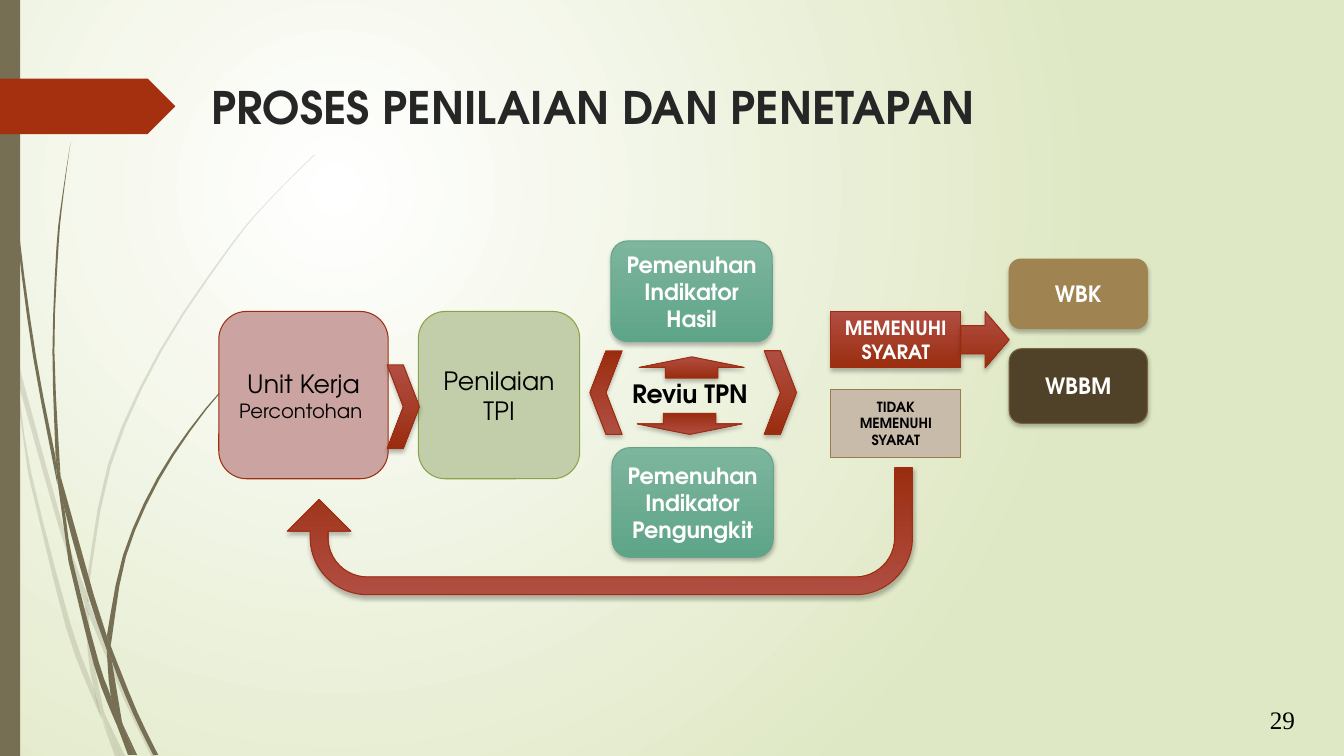
from dataclasses import dataclass

from pptx import Presentation
from pptx import util as u
from pptx.dml.color import RGBColor
from pptx.enum import shapes, text
from pptx.oxml import parse_xml
from pptx.oxml.ns import nsdecls, qn

Kind = shapes.MSO_SHAPE


@dataclass(frozen=True)
class Theme:
    """Colours, fonts and type sizes of the slide."""
    font: str = "TeX Gyre Adventor"
    number_font: str = "Times New Roman"
    back: tuple = ("FFFFFF", "DFE8C4")
    reed: str = "766F54"
    tag: str = "A53010"
    red: tuple = ("B14E43", "9A2D0F")
    red_line: str = "9E2E0F"
    green: tuple = ("7DB59D", "5EA588")
    green_line: str = "65A48B"
    rose: str = "CBA3A0"
    sage: str = "C2CEA9"
    sage_line: str = "8BA249"
    sand: str = "C8BBAA"
    sand_line: str = "987D4D"
    gold: str = "9F8351"
    brown: str = "504228"
    brown_line: str = "77623D"
    heading: str = "262626"
    black: str = "000000"
    white: str = "FFFFFF"
    title: int = 32
    large: int = 18
    medium: int = 16
    small: int = 14
    tiny: int = 10


THEME = Theme()

PALE_REEDS = [
    ([(0.11, 3.5), (0.09, 3.22), (0, 2.82)], [(0, 2.99), (0.1, 3.44)]),
    ([(0.17, 3.76), (0.58, 5.22), (0.84, 5.99)], [(0.85, 5.86), (0.62, 5.2), (0.14, 3.45)]),
    ([(0.88, 5.96), (0.92, 6.07), (1.27, 6.92), (1.55, 7.5)], [(1.5, 7.5), (1.23, 6.94), (0.88, 6.1)]),
    ([(1.19, 7.5), (1.24, 7.5)], [(1.05, 7.11)]),
    ([(0.11, 3.5), (0.17, 3.76), (0.31, 4.69), (0.7, 6.19), (0.93, 6.83), (1.01, 7.14)],
     [(0.92, 6.93), (0.65, 6.21), (0.28, 4.7)]),
    ([(0.84, 5.99), (0.87, 6.46), (0.93, 6.83), (1.05, 7.11)], [(1.03, 7.06), (0.91, 6.46), (0.88, 6.08)]),
    ([(0.88, 5.96), (0.88, 5.84), (1.1, 4.62), (1.6, 3.49), (2.29, 2.45), (2.68, 1.98), (3.12, 1.54)],
     [(3.12, 1.53), (2.68, 1.97), (2.28, 2.44), (1.58, 3.48), (1.07, 4.61), (0.85, 5.84)]),
    ([(1.01, 7.14), (1.14, 7.5)], [(1.19, 7.5)]),
    ([(0.88, 6.1), (0.88, 5.96)], [(0.85, 5.86), (0.84, 5.99)]),
    ([(0.93, 6.83), (0.99, 7.07), (1.19, 7.5)], [(1.05, 7.11), (0.96, 6.92)]),
]
DARK_REEDS = [
    ([(0.03, 0), (0.07, 1.1), (0.17, 2.33), (0.33, 3.55), (0.57, 4.81)],
     [(0.55, 4.53), (0.36, 3.55), (0.19, 2.32), (0.08, 1.09), (0.04, 0)]),
    ([(0.6, 4.72), (0.64, 5.05), (0.88, 5.92), (1.06, 6.45)], [(1.06, 6.31), (0.93, 5.9)]),
    ([(1.1, 6.41), (1.11, 6.56), (1.32, 7.08), (1.52, 7.49)], [(1.57, 7.49), (1.36, 7.06), (1.13, 6.49)]),
    ([(0.57, 4.77), (0.64, 5.05), (0.72, 5.56), (0.98, 6.57), (1.1, 6.91), (1.17, 7.22)],
     [(1.11, 7.08), (0.93, 6.59), (0.68, 5.57)]),
    ([(0.6, 4.72), (0.54, 3.49), (0.58, 2.45), (0.63, 1.93), (0.7, 1.41)],
     [(0.7, 1.41), (0.62, 1.93), (0.56, 2.45), (0.52, 3.49), (0.55, 4.49)]),
    ([(1.33, 7.49), (1.36, 7.49)], [(1.22, 7.19)]),
    ([(0.55, 4.49), (0.57, 4.77), (0.64, 5.05)], [(0.6, 4.72)]),
    ([(1.1, 6.41), (1.11, 6.33), (1.25, 5.52), (1.58, 4.76), (2.05, 4.06), (2.6, 3.44)],
     [(2.6, 3.44), (2.04, 4.05), (1.56, 4.74), (1.22, 5.51), (1.06, 6.31)]),
    ([(1.17, 7.22), (1.27, 7.49)], [(1.31, 7.49)]),
    ([(1.06, 6.45), (1.1, 6.91), (1.22, 7.19)], [(1.21, 7.16), (1.11, 6.56)]),
    ([(1.06, 6.31), (1.06, 6.45)], [(1.11, 6.56), (1.1, 6.41)]),
    ([(1.1, 6.91), (1.17, 7.22), (1.3, 7.49)], [(1.33, 7.49), (1.22, 7.19), (1.16, 7.06)]),
]


def smooth_edge(points, steps=3):
    """Return points along a Catmull-Rom curve through the given points."""
    padded = [points[0], *points, points[-1]]
    curve = [points[0]]
    for a, b, c, d in zip(padded, padded[1:], padded[2:], padded[3:]):
        for step in range(1, steps + 1):
            t = step / steps
            curve.append(tuple(
                q + t / 2 * (r - p + t * (2 * p - 5 * q + 4 * r - s + t * (3 * q - p - 3 * r + s)))
                for p, q, r, s in zip(a, b, c, d)))
    return curve


def paint_gradient(fill, colors):
    """Give a fill a two-colour gradient running from top to bottom."""
    fill.gradient()
    fill.gradient_angle = 270
    for stop, color in zip(fill.gradient_stops, colors):
        stop.color.rgb = RGBColor.from_string(color)


def paint(shape, fill, line=None, shadow=False):
    """Set the fill, outline and soft shadow of a shape."""
    if isinstance(fill, tuple):
        paint_gradient(shape.fill, fill)
    else:
        shape.fill.solid()
        shape.fill.fore_color.rgb = RGBColor.from_string(fill)
    if line:
        shape.line.color.rgb = RGBColor.from_string(line)
        shape.line.width = u.Pt(0.75)
    else:
        shape.line.fill.background()
    shape.shadow.inherit = False
    if shadow:
        shape.element.spPr.find(qn("a:effectLst")).append(parse_xml(
            f'<a:outerShdw {nsdecls("a")} blurRad="{u.Pt(3)}" dist="{u.Pt(2)}" dir="5400000" '
            'rotWithShape="0"><a:srgbClr val="000000"><a:alpha val="25000"/></a:srgbClr></a:outerShdw>'))


def set_font(font, size, color, bold=False, name=THEME.font):
    """Set the face, size, colour and weight of a font."""
    font.name, font.size, font.bold = name, u.Pt(size), bold
    font.color.rgb = RGBColor.from_string(color)


def add_shape(page, kind, at, fill, line=None, shadow=False, turn=0):
    """Draw a preset shape."""
    shape = page.shapes.add_shape(kind, *map(u.Inches, at))
    shape.rotation = turn
    paint(shape, fill, line, shadow)
    return shape


def add_box(page, kind, at, words, size, color, fill, line, bold=True, shadow=True):
    """Draw a process box with centred words."""
    para = add_shape(page, kind, at, fill, line, shadow).text_frame.paragraphs[0]
    para.text = words
    para.alignment = text.PP_ALIGN.CENTER
    set_font(para.font, size, color, bold)
    return para


def add_arrow(page, kind, at, turn=0):
    """Draw a red block arrow."""
    return add_shape(page, kind, at, THEME.red, THEME.red_line, True, turn)


def add_label(page, at, words, size, color, bold=True, name=THEME.font, wrap=True):
    """Place a text box and return its frame."""
    frame = page.shapes.add_textbox(*map(u.Inches, at)).text_frame
    frame.word_wrap = wrap
    frame.paragraphs[0].text = words
    set_font(frame.paragraphs[0].font, size, color, bold, name)
    return frame


def add_reed(page, edges, alpha):
    """Draw a curved blade between its two edges."""
    outline = [tuple(map(u.Inches, point)) for edge in edges for point in smooth_edge(edge)]
    builder = page.shapes.build_freeform(*outline[0])
    builder.add_line_segments(outline[1:], close=True)
    reed = builder.convert_to_shape()
    paint(reed, THEME.reed)
    color = reed.element.spPr.find(qn("a:solidFill"))[0]
    color.append(parse_xml(f'<a:alpha {nsdecls("a")} val="{alpha * 1000}"/>'))


def add_backdrop(page):
    """Draw the radial background, the reeds, the side bar and the title tag."""
    paint_gradient(page.background.fill, THEME.back)
    gradient = page.element.find(".//" + qn("a:gradFill"))
    gradient.replace(gradient.find(qn("a:lin")), parse_xml(
        f'<a:path {nsdecls("a")} path="circle">'
        '<a:fillToRect l="50000" t="50000" r="100000" b="100000"/></a:path>'))
    for reeds, alpha in ((PALE_REEDS, 20), (DARK_REEDS, 100)):
        for edges in reeds:
            add_reed(page, edges, alpha)
    add_shape(page, Kind.RECTANGLE, (0, 0, 0.2, 7.5), THEME.reed)
    add_shape(page, Kind.PENTAGON, (0, 0.78, 1.74, 0.55), THEME.tag)


def add_process(page):
    """Draw the assessment flow from work unit to award."""
    t, rounded, square = THEME, Kind.ROUNDED_RECTANGLE, Kind.RECTANGLE
    unit = add_box(page, rounded, (2.17, 3.09, 1.68, 1.66), "Unit Kerja ", t.large, t.black,
                   t.rose, t.red_line, False, False)
    span = unit.add_run()
    span.text = "Percontohan "
    span.font.size = u.Pt(t.small)
    add_box(page, rounded, (4.15, 3.09, 1.6, 1.66), "Penilaian TPI", t.large, t.black,
            t.sage, t.sage_line, False, False)
    for at, words in (((6.06, 2.39, 1.6, 1), "Pemenuhan Indikator Hasil"),
                      ((6.07, 4.44, 1.6, 1.09), "Pemenuhan Indikator Pengungkit")):
        add_box(page, rounded, at, words, t.medium, t.white, t.green, t.green_line)
    add_label(page, (6.17, 3.7, 1.41, 0.45), "Reviu TPN", t.large, t.black, wrap=False)
    for left, top, turn in ((6.34, 3.54, 0), (6.32, 4.1, 180)):
        add_arrow(page, Kind.UP_ARROW, (left, top, 1.04, 0.21), turn)
    for left, top, turn in ((7.58, 3.48, 0), (5.85, 3.48, 180), (3.84, 3.62, 0)):
        add_arrow(page, Kind.CHEVRON, (left, top, 0.32, 0.83), turn)
    add_box(page, square, (8.24, 3.09, 1.29, 0.56), "MEMENUHI SYARAT", t.small, t.white, t.red, t.red_line)
    add_box(page, square, (8.24, 3.86, 1.29, 0.68), "TIDAK MEMENUHI SYARAT", t.tiny, t.black,
            t.sand, t.sand_line, shadow=False)
    add_box(page, rounded, (10.01, 2.57, 1.37, 0.69), "WBK", t.medium, t.white, t.gold, t.gold)
    add_box(page, rounded, (10.01, 3.46, 1.37, 0.74), "WBBM", t.medium, t.white, t.brown, t.brown_line)
    add_arrow(page, Kind.RIGHT_ARROW, (9.53, 3.09, 0.48, 0.56))
    loop = add_arrow(page, Kind.U_TURN_ARROW, (2.85, 4.64, 6.2, 1.26), 180)
    for index, value in enumerate((0.14, 0.25, 0.25, 0.45, 0.75)):
        loop.adjustments[index] = value


def main():
    """Build the slide and save it."""
    deck = Presentation()
    deck.slide_width, deck.slide_height = u.Inches(13.33), u.Inches(7.5)
    page = deck.slides.add_slide(deck.slide_layouts[6])
    add_backdrop(page)
    add_label(page, (2, 0.74, 9.75, 1.4), "PROSES PENILAIAN DAN PENETAPAN", THEME.title, THEME.heading)
    add_process(page)
    number = add_label(page, (12.42, 6.98, 0.6, 0.31), "29", THEME.large, THEME.black, False, THEME.number_font)
    number.vertical_anchor = text.MSO_ANCHOR.MIDDLE
    number.paragraphs[0].alignment = text.PP_ALIGN.CENTER
    deck.save("out.pptx")


if __name__ == "__main__":
    main()
